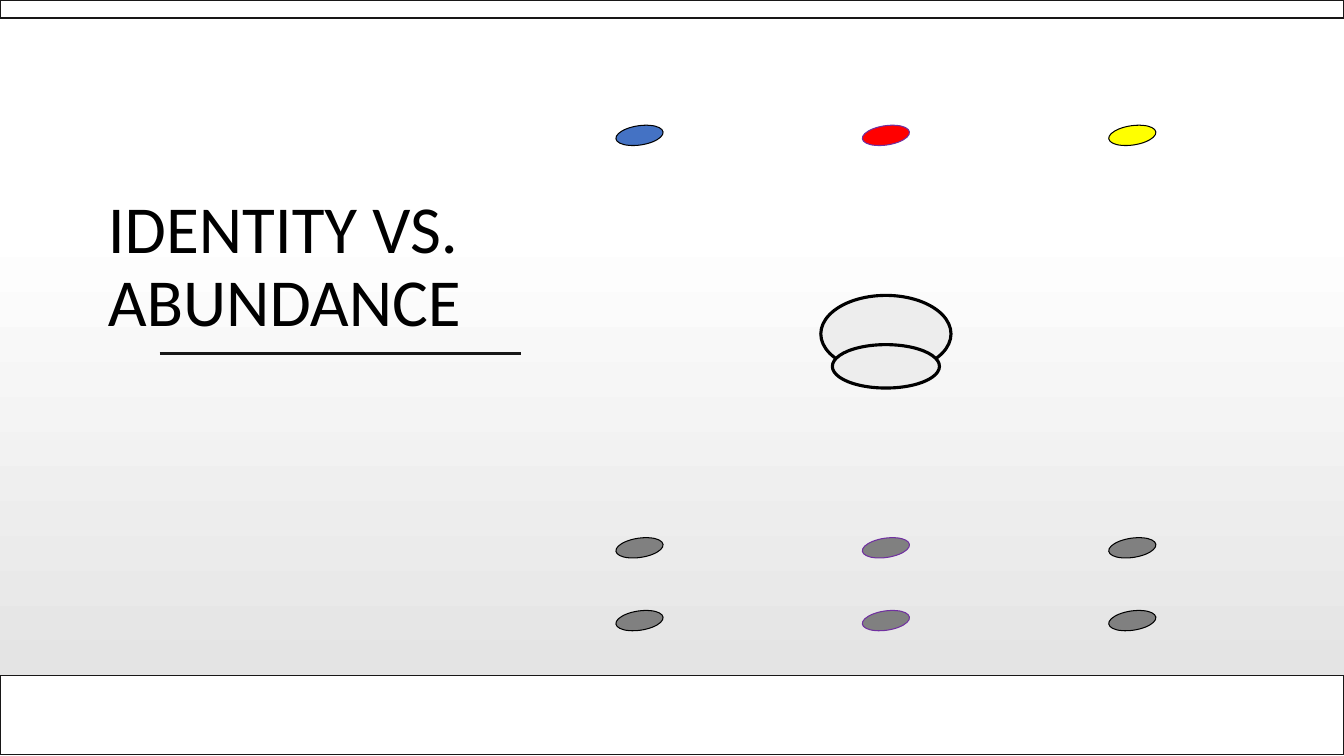
from dataclasses import dataclass

from lxml import etree
from pptx import Presentation
from pptx import util as u
from pptx.dml.color import RGBColor
from pptx.enum import shapes, text
from pptx.oxml.ns import qn


@dataclass(frozen=True)
class Theme:
    font: str = "Calibri"
    title_size: float = 48
    black: str = "000000"
    frame: str = "181717"
    floor_line: str = "CCCCCC"
    white: str = "FFFFFF"
    shade: str = "E4E4E4"
    cell: str = "EDEDED"
    blue: str = "4472C4"
    red: str = "FF0000"
    yellow: str = "FFFF00"
    purple: str = "7030A0"
    grey: str = "808080"


THEME = Theme()
WIDTH, HEIGHT = 960, 540
RECTANGLE = shapes.MSO_SHAPE.RECTANGLE
OVAL = shapes.MSO_SHAPE.OVAL


def color(value):
    return RGBColor.from_string(value)


def add_figure(slide, kind, box, fill=None, line=None, weight=1, rotation=0):
    shape = slide.shapes.add_shape(kind, *(u.Pt(length) for length in box))
    shape.shadow.inherit = False
    shape.rotation = rotation
    if fill:
        shape.fill.solid()
        shape.fill.fore_color.rgb = color(fill)
    else:
        shape.fill.background()
    if line:
        shape.line.color.rgb = color(line)
        shape.line.width = u.Pt(weight)
    else:
        shape.line.fill.background()
    return shape


def add_rule(slide, left, top, width, line, weight):
    connector = slide.shapes.add_connector(
        shapes.MSO_CONNECTOR.STRAIGHT,
        u.Pt(left), u.Pt(top), u.Pt(left + width), u.Pt(top))
    connector.line.color.rgb = color(line)
    connector.line.width = u.Pt(weight)
    properties = connector._element.find(qn("p:spPr"))
    etree.SubElement(properties, qn("a:effectLst"))


def add_text(slide, content, box, *, size, fill, font, anchor, spacing):
    shape = slide.shapes.add_textbox(*(u.Pt(length) for length in box))
    frame = shape.text_frame
    frame.word_wrap = True
    frame.vertical_anchor = anchor
    paragraph = frame.paragraphs[0]
    paragraph.text = content
    paragraph.line_spacing = spacing
    paragraph.font.size = u.Pt(size)
    paragraph.font.name = font
    paragraph.font.color.rgb = color(fill)


def draw_backdrop(slide, box):
    """Shaded floor between a thin top bar and a deeper bottom bar."""
    left, top, width, height = box
    floor = top + 482.4
    shade_top = top + 159
    shade = add_figure(slide, RECTANGLE,
                       (left, shade_top, width, floor - shade_top))
    shade.fill.gradient()
    shade.fill.gradient_angle = 270
    for stop, value in zip(shade.fill.gradient_stops,
                           (THEME.white, THEME.shade)):
        stop.color.rgb = color(value)
    add_rule(slide, left, floor, width, THEME.floor_line, 1)
    for bar_top, bar_height in ((floor, height - 483.6), (top, 12.8)):
        add_figure(slide, RECTANGLE, (left, bar_top, width, bar_height),
                   line=THEME.frame)


def draw_title(slide, box):
    """Heading resting on the bottom of its box, with a rule below."""
    left, top, width, height = box
    add_rule(slide, left + 44, top + height + 5.5, 258, THEME.frame, 2.5)
    add_text(slide, "IDENTITY VS. ABUNDANCE", box, size=THEME.title_size,
             fill=THEME.black, font=THEME.font,
             anchor=text.MSO_ANCHOR.BOTTOM, spacing=0.9)


def draw_diagram(slide, box):
    """Rows of tilted spots around two overlapping ovals."""
    left, top, width, height = box
    spot_width, spot_height = 34, 13.8
    column_pitch = (width - spot_width) / 2
    outlines = (THEME.black, THEME.purple, THEME.black)
    rows = (
        (0, (THEME.blue, THEME.red, THEME.yellow)),
        (height - spot_height - 52, (THEME.grey,) * 3),
        (height - spot_height, (THEME.grey,) * 3),
    )
    for offset, fills in rows:
        for column, (fill, outline) in enumerate(zip(fills, outlines)):
            spot = (left + column * column_pitch, top + offset,
                    spot_width, spot_height)
            add_figure(slide, OVAL, spot, fill, outline, 0.75, 351.6)

    # Large oval behind, small oval in front, both on the middle column
    center = left + width / 2
    for offset, oval_width, oval_height in ((121.2, 93, 55), (156.4, 76.5, 31)):
        oval = (center - oval_width / 2, top + offset, oval_width, oval_height)
        add_figure(slide, OVAL, oval, THEME.cell, THEME.black, 2.25)


def main():
    presentation = Presentation()
    presentation.slide_width = u.Pt(WIDTH)
    presentation.slide_height = u.Pt(HEIGHT)
    slide = presentation.slides.add_slide(presentation.slide_layouts[6])
    draw_backdrop(slide, (0, 0, WIDTH, HEIGHT))
    draw_title(slide, (70, 47, 340, 200))
    draw_diagram(slide, (439.8, 89.8, 386, 360.4))
    presentation.save("out.pptx")


if __name__ == "__main__":
    main()
